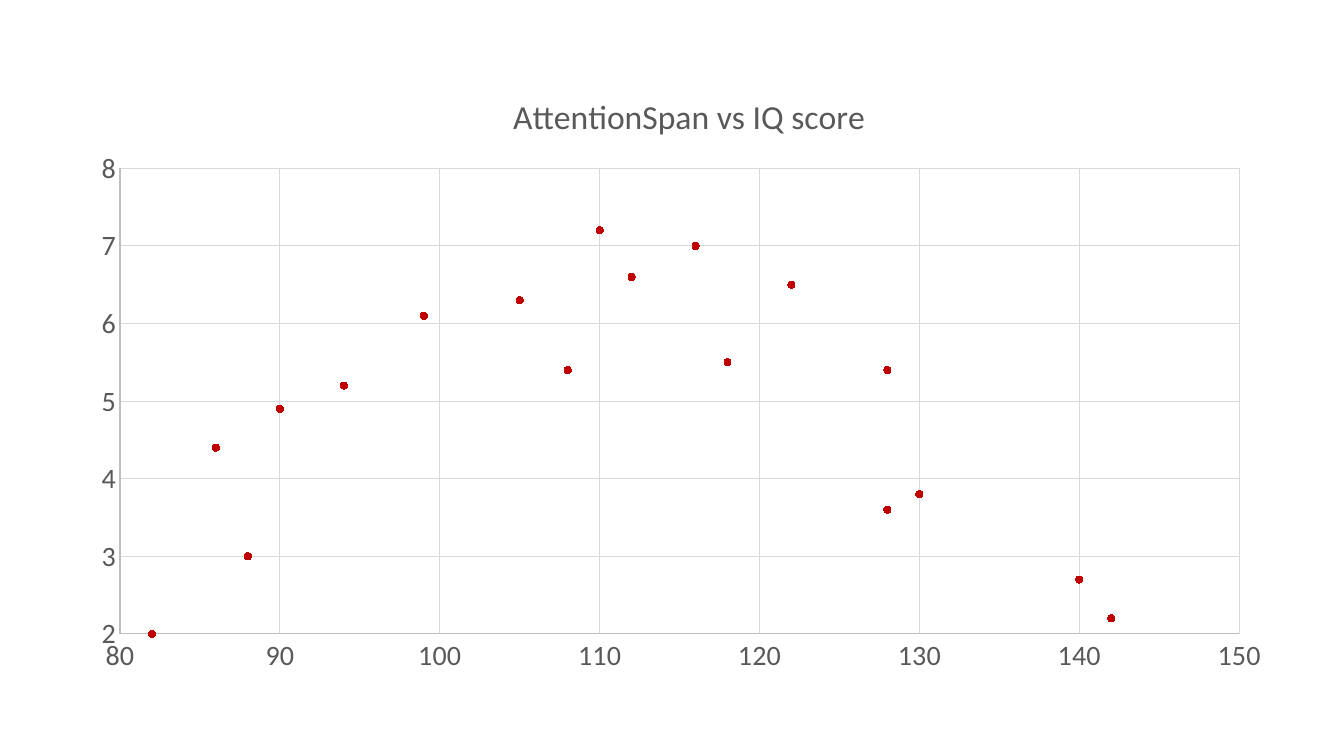
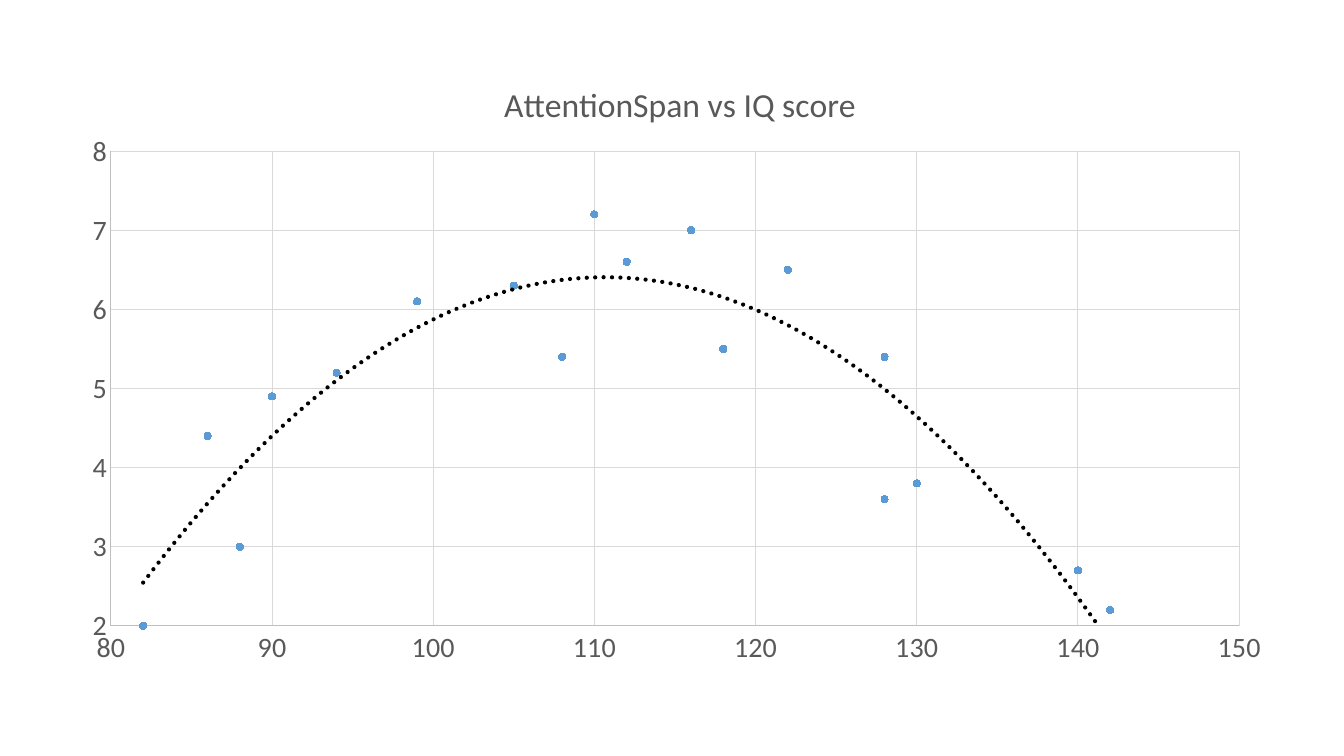
from dataclasses import dataclass

import lxml.etree
import pptx
import pptx.chart.data
import pptx.dml.color
import pptx.enum.chart
import pptx.oxml
import pptx.oxml.ns
import pptx.util

Inches = pptx.util.Inches
Pt = pptx.util.Pt
qn = pptx.oxml.ns.qn

SCORES = [
    (82, 2), (88, 3), (86, 4.4), (94, 5.2), (90, 4.9), (99, 6.1),
    (105, 6.3), (108, 5.4), (112, 6.6), (116, 7), (122, 6.5), (110, 7.2),
    (118, 5.5), (128, 3.6), (128, 5.4), (130, 3.8), (140, 2.7), (142, 2.2),
]


@dataclass(frozen=True)
class Theme:
    font: str = "Calibri"
    text: str = "595959"
    axis: str = "BFBFBF"
    grid: str = "D9D9D9"
    trend: str = "000000"
    red: str = "C00000"
    blue: str = "5B9BD5"
    title_size: int = 24
    label_size: int = 20
    line_width: float = 0.75
    trend_width: int = 3
    marker_size: int = 5


def rgb(colour):
    return pptx.dml.color.RGBColor.from_string(colour)


def manual_layout(target=None, **fractions):
    """Return a c:layout element placed by fractions of the chart's size."""
    layout = lxml.etree.Element(qn("c:layout"))
    manual = lxml.etree.SubElement(layout, qn("c:manualLayout"))
    if target:
        lxml.etree.SubElement(manual, qn("c:layoutTarget"), val=target)
    for mode in ("xMode", "yMode"):
        lxml.etree.SubElement(manual, qn(f"c:{mode}"), val="edge")
    for name, value in fractions.items():
        lxml.etree.SubElement(manual, qn(f"c:{name}"), val=f"{value:.4f}")
    return layout


def replace_layout(parent, layout, after=None):
    for old in parent.findall(qn("c:layout")):
        parent.remove(old)
    if after is None:
        parent.insert(0, layout)
    else:
        after.addnext(layout)


class ScatterDeck:
    def __init__(self, theme):
        self.theme = theme
        self.deck = pptx.Presentation()
        self.deck.slide_width = Inches(13.33)
        self.deck.slide_height = Inches(7.5)
        self.page = None

    def add_page(self):
        self.page = self.deck.slides.add_slide(self.deck.slide_layouts[6])

    def style_font(self, font, size):
        font.name = self.theme.font
        font.size = Pt(size)
        font.bold = False
        font.color.rgb = rgb(self.theme.text)

    def style_line(self, line, colour):
        line.color.rgb = rgb(colour)
        line.width = Pt(self.theme.line_width)

    def add_scatter(self, left, top, width, height, colour, plot_top, title_top):
        """Add the score chart; plot_top and title_top count from its top edge."""
        data = pptx.chart.data.XyChartData()
        points = data.add_series("Series 1")
        for iq, span in SCORES:
            points.add_data_point(iq, span)
        chart = self.page.shapes.add_chart(
            pptx.enum.chart.XL_CHART_TYPE.XY_SCATTER,
            Inches(left), Inches(top), Inches(width), Inches(height), data,
        ).chart
        chart.has_legend = False
        self.style_font(chart.font, self.theme.label_size)
        self.add_title(chart, 4.25 / width, title_top / height)
        self.style_axis(chart.category_axis, 80, 150, 10)
        self.style_axis(chart.value_axis, 2, 8, 1)
        plot_layout = manual_layout(
            "inner", x=0.41 / width, y=plot_top / height,
            w=(width - 0.87) / width, h=(height - 0.52 - plot_top) / height,
        )
        plot = chart.plots[0]
        plot.vary_by_categories = False
        replace_layout(chart.element.find(".//" + qn("c:plotArea")), plot_layout)
        series = plot.series[0]
        self.style_markers(series, colour)
        return series

    def add_title(self, chart, x, y):
        chart.has_title = True
        title = chart.chart_title
        title.include_in_layout = False
        span = title.text_frame.paragraphs[0].add_run()
        span.text = "AttentionSpan vs IQ score"
        self.style_font(span.font, self.theme.title_size)
        element = chart.element.find(".//" + qn("c:title"))
        replace_layout(element, manual_layout(x=x, y=y), element.find(qn("c:tx")))

    def style_axis(self, axis, low, high, step):
        axis.minimum_scale = low
        axis.maximum_scale = high
        axis.major_unit = step
        axis.major_tick_mark = pptx.enum.chart.XL_TICK_MARK.NONE
        axis.minor_tick_mark = pptx.enum.chart.XL_TICK_MARK.NONE
        axis.has_major_gridlines = True
        self.style_line(axis.major_gridlines.format.line, self.theme.grid)
        self.style_line(axis.format.line, self.theme.axis)
        self.style_font(axis.tick_labels.font, self.theme.label_size)

    def style_markers(self, series, colour):
        series.smooth = False
        series.format.line.fill.background()
        marker = series.marker
        marker.style = pptx.enum.chart.XL_MARKER_STYLE.CIRCLE
        marker.size = self.theme.marker_size
        marker.format.fill.solid()
        marker.format.fill.fore_color.rgb = rgb(colour)
        self.style_line(marker.format.line, colour)

    def add_trend(self, series):
        """Fit a dotted second-order curve through the series."""
        trend = pptx.oxml.parse_xml(
            f'<c:trendline {pptx.oxml.ns.nsdecls("c", "a")}>'
            f'<c:spPr><a:ln w="{Pt(self.theme.trend_width)}" cap="rnd"><a:solidFill>'
            f'<a:srgbClr val="{self.theme.trend}"/></a:solidFill>'
            '<a:prstDash val="sysDot"/></a:ln></c:spPr>'
            '<c:trendlineType val="poly"/><c:order val="2"/>'
            '<c:dispRSqr val="0"/><c:dispEq val="0"/></c:trendline>'
        )
        series.marker.format  # the marker element precedes the trend line
        series._element.find(qn("c:xVal")).addprevious(trend)

    def save(self):
        self.deck.save("out.pptx")


def main():
    theme = Theme()
    deck = ScatterDeck(theme)
    deck.add_page()
    deck.add_scatter(0.78, 0.6, 11.97, 6.21, theme.red, plot_top=1.07, title_top=0.27)
    deck.add_page()
    scores = deck.add_scatter(
        0.69, 0.52, 12.06, 6.21, theme.blue, plot_top=0.98, title_top=0.23
    )
    deck.add_trend(scores)
    deck.save()


if __name__ == "__main__":
    main()
